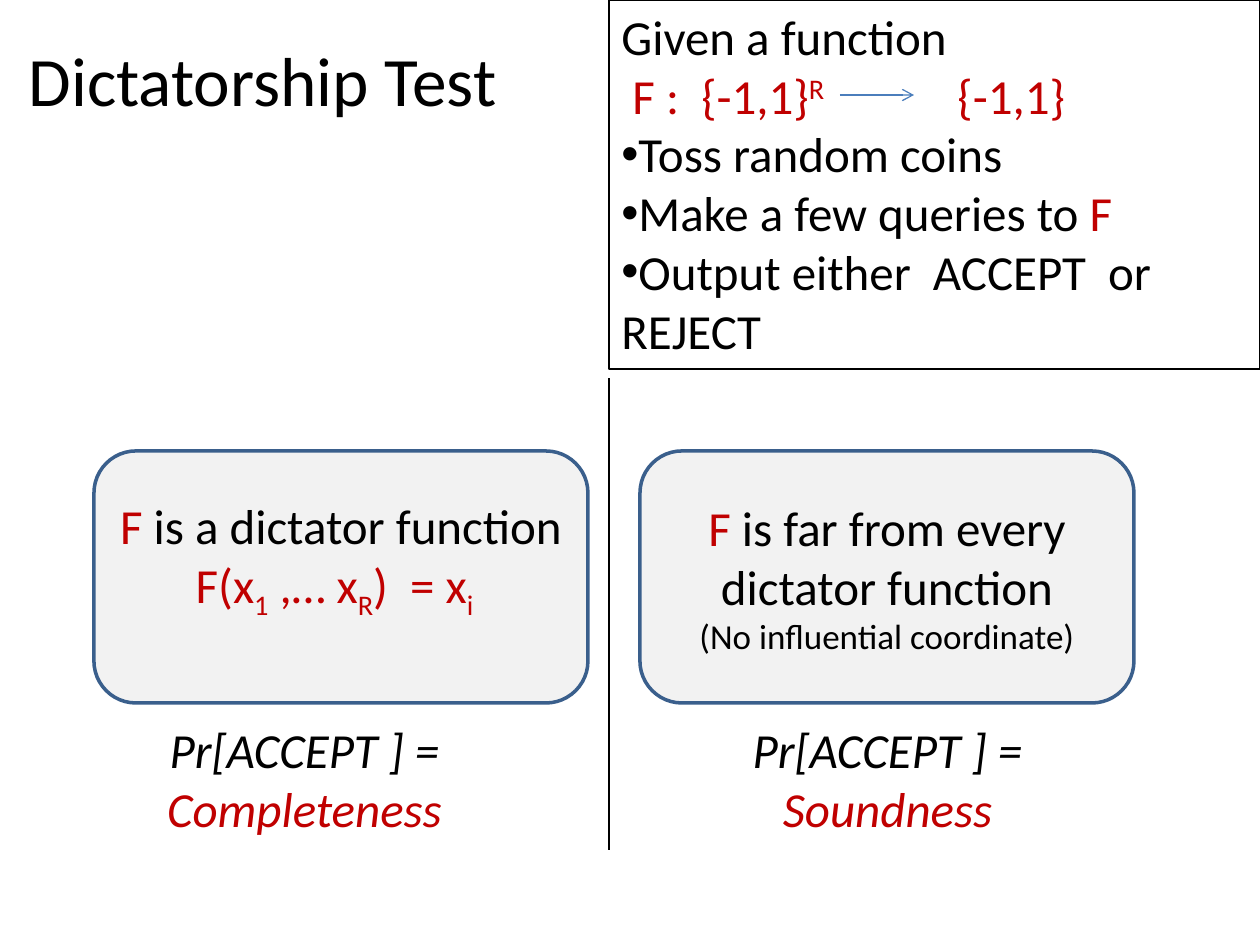
from lxml.etree import SubElement
from pptx import Presentation
from pptx.dml.color import RGBColor
from pptx.enum.shapes import MSO_CONNECTOR, MSO_SHAPE
from pptx.enum.text import MSO_ANCHOR, PP_ALIGN
from pptx.oxml.ns import qn
from pptx.util import Pt

EMU_PER_PX = 914400 / 126
BLACK, RED, GREY, BLUE, ARROW_BLUE = "000000", "C00000", "F2F2F2", "3A5F8C", "4B7EBC"
SUP, SUB = 30, -25

# A paragraph is a list of runs: (text, colour, format overrides)
TITLE = [[("Dictatorship Test", BLACK, {"size": 39.6})]]
TEST_INTRO = [
    [("Given a function", BLACK, {})],
    [(" F :  {-1,1}", RED, {}), ("R", RED, {"base": SUP}), ("\t{-1,1}", RED, {})],
]
TEST_STEPS = [
    [("Toss random coins", BLACK, {})],
    [("Make a few queries to ", BLACK, {}), ("F", RED, {})],
    [("Output either  ACCEPT  or REJECT", BLACK, {})],
]
DICTATOR = [
    [("F", RED, {}), (" is a dictator function", BLACK, {})],
    [("F(x", RED, {}), ("1", RED, {"base": SUB}), (" ,… x", RED, {}),
     ("R", RED, {"base": SUB}), (")  = x", RED, {}), ("i  ", RED, {"base": SUB})],
]
FAR = [
    [("F", RED, {}), (" is far from every dictator function", BLACK, {})],
    [("(No influential coordinate)", BLACK, {"size": 20})],
]
# case box left, case text, bottom inset, outcome left, outcome width, outcome name
CASES = [
    (94, DICTATOR, 44, 21, 567, "Completeness"),
    (640, FAR, 6, 651, 473, "Soundness"),
]


def px(n):
    return round(n * EMU_PER_PX)


def rgb(color):
    return RGBColor.from_string(color)


def write(sp, paragraphs, align=PP_ALIGN.CENTER, anchor=MSO_ANCHOR.TOP):
    tf = sp.text_frame
    tf.word_wrap = True
    tf.vertical_anchor = anchor
    for i, runs in enumerate(paragraphs):
        p = tf.add_paragraph() if i else tf.paragraphs[0]
        p.alignment = align
        for text, color, fmt in runs:
            r = p.add_run()
            r.text = text
            r.font.name = "Calibri"
            r.font.size = Pt(fmt.get("size", 28))
            r.font.color.rgb = rgb(color)
            if fmt.get("italic"):
                r.font.italic = True
            if "base" in fmt:
                r.font._element.set("baseline", str(fmt["base"] * 1000))
    return tf


def add_text(s, box, paragraphs, **layout):
    return write(s.shapes.add_textbox(*map(px, box)), paragraphs, **layout)


def add_box(s, kind, box, fill, line, width):
    sp = s.shapes.add_shape(kind, *map(px, box))
    sp.shadow.inherit = False
    if fill:
        sp.fill.solid()
        sp.fill.fore_color.rgb = rgb(fill)
    else:
        sp.fill.background()
    sp.line.color.rgb = rgb(line)
    sp.line.width = Pt(width)
    return sp


def add_line(s, ends, color, width, arrow=False):
    c = s.shapes.add_connector(MSO_CONNECTOR.STRAIGHT, *map(px, ends))
    c.line.color.rgb = rgb(color)
    c.line.width = Pt(width)
    if arrow:
        SubElement(c.line._get_or_add_ln(), qn("a:tailEnd"), type="arrow")
    SubElement(c._element.spPr, qn("a:effectLst"))


def add_bullet(p):
    pPr = p._p.get_or_add_pPr()
    SubElement(pPr, qn("a:buFont"), typeface="Arial")
    SubElement(pPr, qn("a:buChar"), char="•")


def add_tab_stop(p, pos):
    tabs = SubElement(p._p.get_or_add_pPr(), qn("a:tabLst"))
    SubElement(tabs, qn("a:tab"), pos=str(px(pos)), algn="l")


def main():
    prs = Presentation()
    prs.slide_width, prs.slide_height = px(1260), px(945)
    s = prs.slides.add_slide(prs.slide_layouts[6])

    add_text(s, (0, 0, 525, 158), TITLE, anchor=MSO_ANCHOR.MIDDLE)

    test = add_box(s, MSO_SHAPE.RECTANGLE, (609, 0, 651, 369), None, BLACK, 0.75)
    tf = write(test, TEST_INTRO + TEST_STEPS, align=PP_ALIGN.LEFT)
    add_tab_stop(tf.paragraphs[1], 336)
    for p in tf.paragraphs[len(TEST_INTRO):]:
        add_bullet(p)
    add_line(s, (840, 95, 914, 95), ARROW_BLUE, 0.75, arrow=True)

    for left, case, inset, outcome_left, outcome_width, outcome in CASES:
        sp = add_box(s, MSO_SHAPE.ROUNDED_RECTANGLE, (left, 451, 494, 252), GREY, BLUE, 2)
        write(sp, case, anchor=MSO_ANCHOR.MIDDLE).margin_bottom = px(inset)
        add_text(s, (outcome_left, 713, outcome_width, 131), [
            [("Pr[ACCEPT ] =", BLACK, {"italic": True})],
            [(outcome, RED, {"italic": True})],
        ])

    add_line(s, (609, 378, 609, 850), BLACK, 1.5)
    prs.save("out.pptx")


if __name__ == "__main__":
    main()
